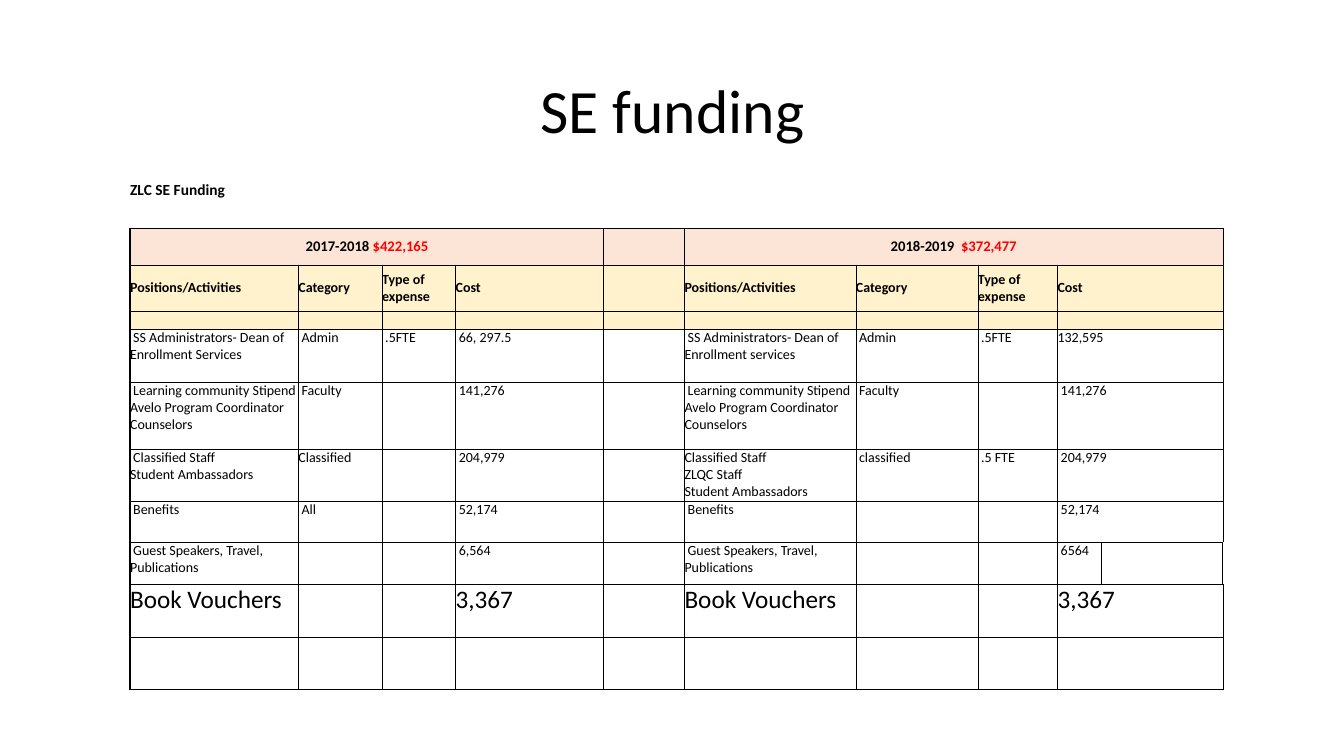
from lxml import etree
from pptx import Presentation
from pptx.dml.color import RGBColor
from pptx.enum.text import MSO_ANCHOR, PP_ALIGN
from pptx.oxml.ns import qn
from pptx.util import Inches, Pt

CENTER, LEFT = PP_ALIGN.CENTER, PP_ALIGN.LEFT
MIDDLE, TOP = MSO_ANCHOR.MIDDLE, MSO_ANCHOR.TOP
COLORS = {"text": "000000", "amount": "FF0000", "year": "FCE4D6", "heading": "FFF2CC"}


def write(frame, *parts, size=10, bold=False, align=LEFT, spacing=1.0):
    frame.clear()
    paragraph = frame.paragraphs[0]
    for text, color in parts:
        for index, line in enumerate(text.split("\n")):
            if index:
                paragraph = frame.add_paragraph()
            paragraph.alignment = align
            paragraph.line_spacing = spacing
            if not line:
                etree.SubElement(paragraph._p, qn("a:endParaRPr"), sz=str(size * 100))
                continue
            run = paragraph.add_run()
            run.text = line
            run.font.name = "Calibri"
            run.font.size = Pt(size)
            run.font.bold = bold
            run.font.color.rgb = RGBColor.from_string(COLORS[color])


def draw_border(cell, side, width):
    line = etree.SubElement(cell._tc.get_or_add_tcPr(), qn("a:ln" + side), w=str(Pt(width)))
    if width:
        fill = etree.SubElement(line, qn("a:solidFill"))
        etree.SubElement(fill, qn("a:srgbClr"), val=COLORS["text"])
    else:
        etree.SubElement(line, qn("a:noFill"))


presentation = Presentation()
presentation.slide_width = Inches(13.33)
presentation.slide_height = Inches(7.5)
slide = presentation.slides.add_slide(presentation.slide_layouts[5])

title = slide.shapes.title
title.left, title.top = Inches(0.92), Inches(0.4)
title.width, title.height = Inches(11.5), Inches(1.45)
title.text_frame.vertical_anchor = MIDDLE
write(title.text_frame, (" SE funding ", "text"), size=44, align=CENTER, spacing=0.9)

column_widths = [1.67, 0.83, 0.73, 1.47, 0.8, 1.7, 1.21, 0.79, 0.43, 1.21]
row_heights = [0.76, 0.36, 0.46, 0.18, 0.52, 0.67, 0.51, 0.41, 0.42, 0.52, 0.52]
headings = ["Positions/Activities", "Category", "Type of expense", "Cost"]
community = " Learning community Stipend\nAvelo Program Coordinator\nCounselors"
speakers = " Guest Speakers, Travel, Publications"
blank = [""] * 4
funding = [
    (["ZLC SE Funding", "", "", ""], blank),
    (blank, blank),
    (headings, headings),
    (blank, blank),
    ([" SS Administrators- Dean of Enrollment Services", " Admin", " .5FTE", " 66, 297.5"],
     [" SS Administrators- Dean of Enrollment services", " Admin", " .5FTE", "132,595"]),
    ([community, " Faculty", "", " 141,276"],
     [community, " Faculty", "", " 141,276"]),
    ([" Classified Staff\nStudent Ambassadors", "Classified", "", " 204,979"],
     ["Classified Staff \nZLQC Staff\nStudent Ambassadors", " classified", " .5 FTE", " 204,979"]),
    ([" Benefits", " All", "", " 52,174"],
     [" Benefits", "", "", " 52,174"]),
    ([speakers, "", "", " 6,564"],
     [speakers, "", "", " 6564"]),
    (["Book Vouchers", "", "", "3,367"],
     ["Book Vouchers", "", "", "3,367"]),
    (blank, blank),
]
row_fills = {1: "year", 2: "heading", 3: "heading"}
row_sizes = {0: 11, 9: 18}
thick_edges = {0, 4, 5, 10}

table_frame = slide.shapes.add_table(
    len(row_heights), len(column_widths), Inches(1.29), Inches(1.51),
    Inches(sum(column_widths)), Inches(sum(row_heights)))
table = table_frame.table
table.first_row = False
table.horz_banding = False
for column, width in zip(table.columns, column_widths):
    column.width = Inches(width)
for row, height in zip(table.rows, row_heights):
    row.height = Inches(height)

for r, (before, after) in enumerate(funding):
    for c, text in enumerate(before + [""] + after + [""]):
        cell = table.cell(r, c)
        cell.margin_left = cell.margin_right = cell.margin_top = cell.margin_bottom = 0
        cell.vertical_anchor = MIDDLE if r < 3 else TOP
        write(cell.text_frame, (text, "text"), size=row_sizes.get(r, 10), bold=r < 3)
        edges = {
            "L": 1 if c in thick_edges else 0.5,
            "R": 1 if c + 1 in thick_edges else 0.5,
            "T": 1 if r == 1 else 0.5,
            "B": 0.5,
        }
        if r == 0:
            edges = {"L": 0, "R": 0, "T": 0, "B": 1}
        for side, width in edges.items():
            draw_border(cell, side, width)
        if r in row_fills:
            cell.fill.solid()
            cell.fill.fore_color.rgb = RGBColor.from_string(COLORS[row_fills[r]])
        else:
            cell.fill.background()

for c, year, amount in [(0, "2017-2018 ", "$422,165"), (5, "2018-2019  ", "$372,477")]:
    write(table.cell(1, c).text_frame, (year, "text"), (amount, "amount"),
          size=10.5, bold=True, align=CENTER)

cost_merges = [(r, 8, 9) for r in range(2, len(funding)) if r != 8]
for r, first, last in [(0, 0, 5), (0, 7, 8), (1, 0, 3), (1, 5, 9)] + cost_merges:
    table.cell(r, first).merge(table.cell(r, last))

presentation.save("out.pptx")
